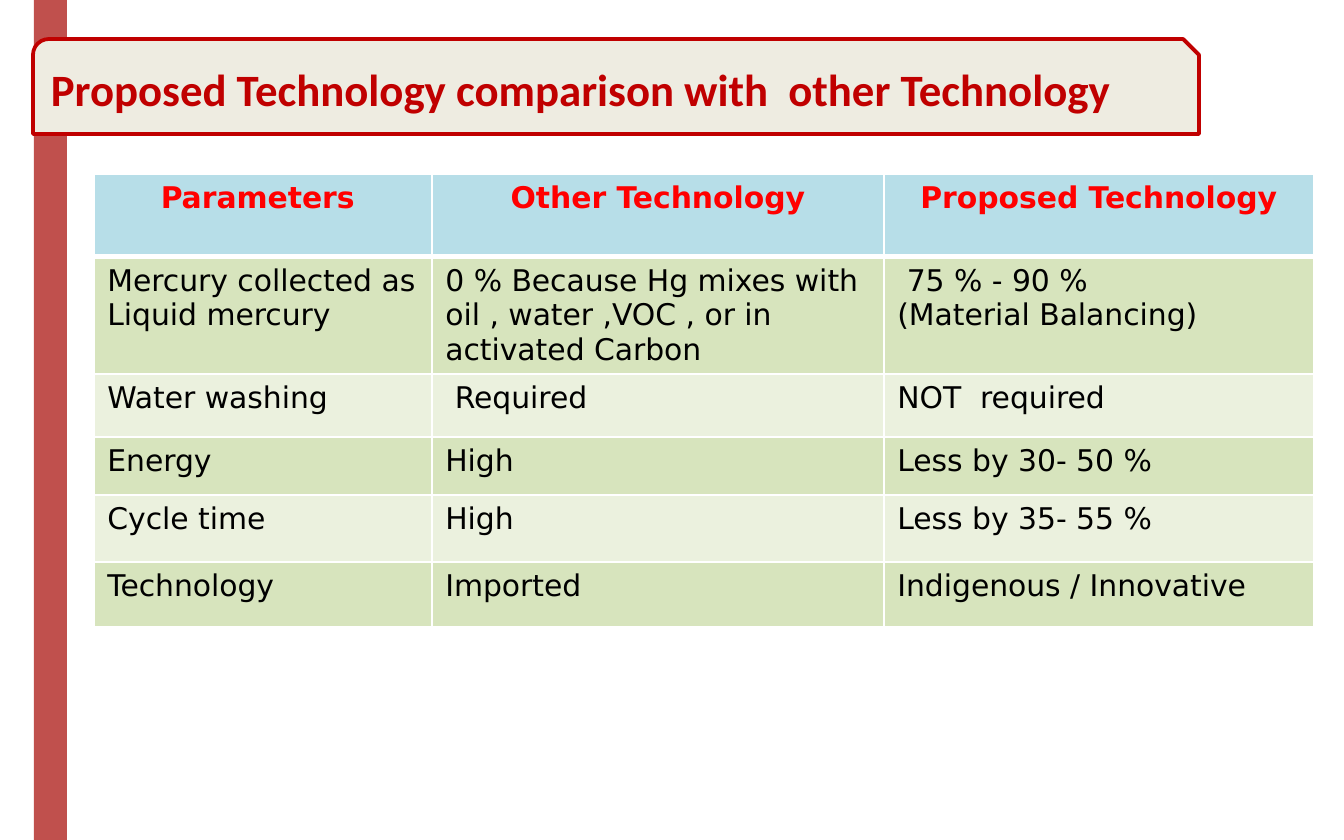
from lxml.etree import SubElement
from pptx import Presentation
from pptx.dml.color import RGBColor
from pptx.enum.shapes import MSO_SHAPE
from pptx.enum.text import MSO_ANCHOR, PP_ALIGN
from pptx.oxml.ns import qn
from pptx.util import Emu, Pt

EMU_PER_PX = 914400 / 134.4
COLORS = {
    "stripe": "C0504D",
    "title": "C00000",
    "title_fill": "EEECE1",
    "header": "FF0000",
    "header_fill": "B7DEE8",
    "body": "000000",
    "odd_row": "D7E4BD",
    "even_row": "EBF1DE",
    "border": "FFFFFF",
}
COLUMN_WIDTHS = [338, 452, 430]
ROW_HEIGHTS = [83, 116, 63, 58, 67, 65]
COMPARISON = [
    ["Parameters ", "Other Technology", "Proposed Technology"],
    ["Mercury collected as Liquid mercury",
     "0 % Because Hg mixes with oil , water ,VOC , or in  activated Carbon",
     " 75 % - 90 %\n(Material Balancing)"],
    ["Water washing", " Required", "NOT  required"],
    ["Energy", "High", "Less by 30- 50 %"],
    ["Cycle time", "High", "Less by 35- 55 %"],
    ["Technology", "Imported", "Indigenous / Innovative"],
]


def px(length):
    return Emu(round(length * EMU_PER_PX))


def color(name):
    return RGBColor.from_string(COLORS[name])


def style_text(frame, font_name, size, color_name, bold, alignment):
    for paragraph in frame.paragraphs:
        paragraph.alignment = alignment
        font = paragraph.font
        font.name = font_name
        font.size = Pt(size)
        font.bold = bold
        font.color.rgb = color(color_name)


def add_block(page, preset, left, top, width, height, fill):
    shape = page.shapes.add_shape(preset, px(left), px(top), px(width), px(height))
    shape.shadow.inherit = False
    shape.fill.solid()
    shape.fill.fore_color.rgb = color(fill)
    shape.line.fill.background()
    return shape


def add_title(page, text):
    banner = add_block(page, MSO_SHAPE.SNIP_ROUND_RECTANGLE, 33, 39, 1166, 95, "title_fill")
    banner.line.color.rgb = color("title")
    banner.line.width = Pt(2)
    frame = banner.text_frame
    frame.word_wrap = True
    frame.vertical_anchor = MSO_ANCHOR.MIDDLE
    frame.text = text
    style_text(frame, "Calibri", 24, "title", True, PP_ALIGN.LEFT)


def add_borders(cell, bottom_width, top_width):
    properties = cell._tc.get_or_add_tcPr()
    widths = {"a:lnL": 1, "a:lnR": 1, "a:lnT": top_width, "a:lnB": bottom_width}
    for tag, width in widths.items():
        line = SubElement(properties, qn(tag), w=str(Pt(width)))
        fill = SubElement(line, qn("a:solidFill"))
        SubElement(fill, qn("a:srgbClr"), val=COLORS["border"])


def fill_cell(cell, text, row_index):
    is_header = row_index == 0
    add_borders(cell, 3 if is_header else 1, 3 if row_index == 1 else 1)
    cell.fill.solid()
    row_fill = "odd_row" if row_index % 2 else "even_row"
    cell.fill.fore_color.rgb = color("header_fill" if is_header else row_fill)
    cell.text = text
    style_text(cell.text_frame, "DejaVu Sans", 16,
               "header" if is_header else "body", is_header,
               PP_ALIGN.CENTER if is_header else PP_ALIGN.LEFT)


def add_comparison_table(page, left, top):
    table = page.shapes.add_table(
        len(ROW_HEIGHTS), len(COLUMN_WIDTHS), px(left), px(top),
        px(sum(COLUMN_WIDTHS)), px(sum(ROW_HEIGHTS))).table
    for column, width in zip(table.columns, COLUMN_WIDTHS):
        column.width = px(width)
    for row_index, (row, height) in enumerate(zip(table.rows, ROW_HEIGHTS)):
        row.height = px(height)
        for cell, text in zip(row.cells, COMPARISON[row_index]):
            fill_cell(cell, text, row_index)


def main():
    deck = Presentation()
    deck.slide_width, deck.slide_height = px(1344), px(840)
    page = deck.slides.add_slide(deck.slide_layouts[6])
    add_block(page, MSO_SHAPE.RECTANGLE, 34, 0, 33, 840, "stripe")
    add_comparison_table(page, 94, 174)
    add_title(page, "Proposed Technology comparison with  other Technology")
    deck.save("out.pptx")


if __name__ == "__main__":
    main()
